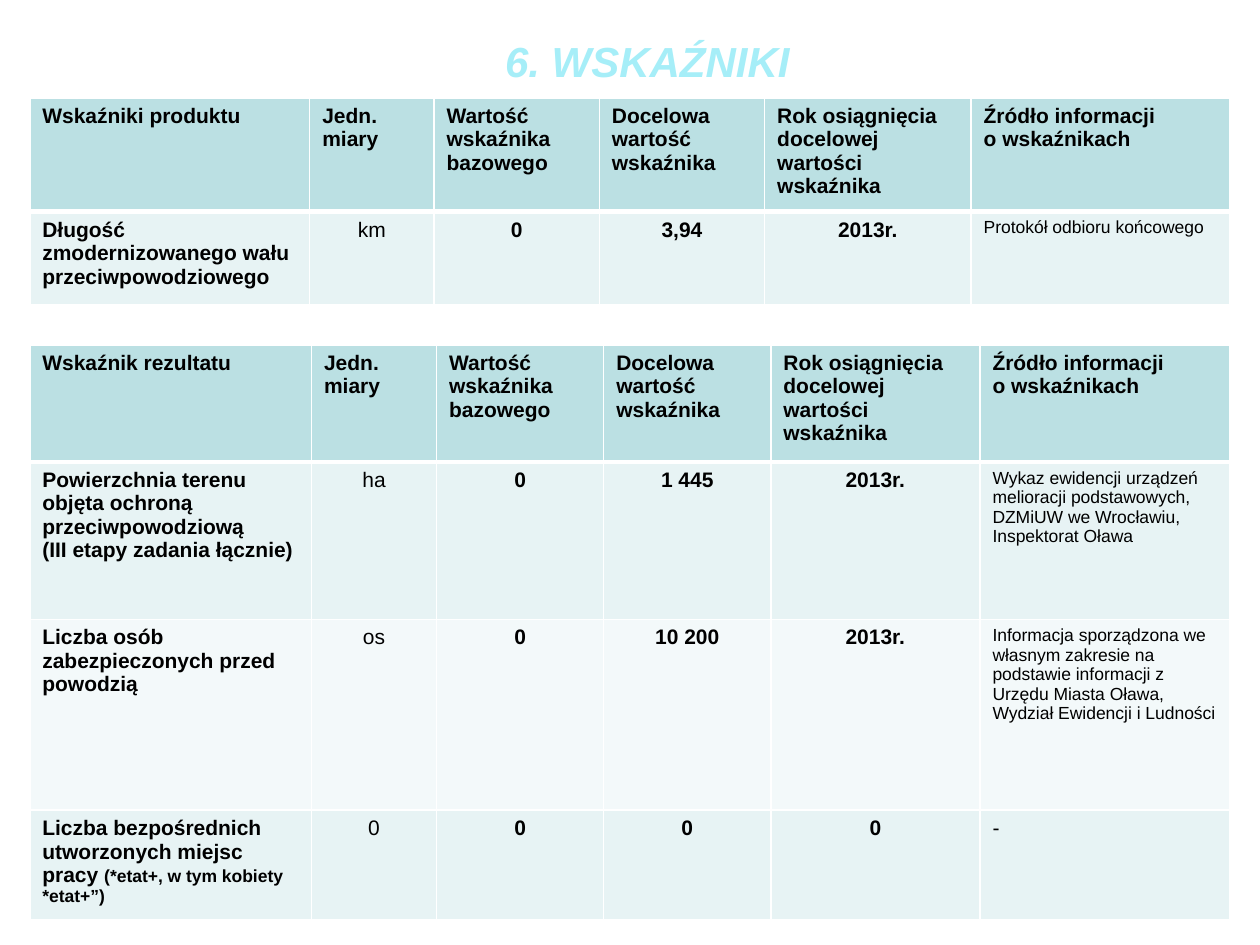
"""Build the slide with the product and result indicator tables."""
import pptx
import pptx.dml.color
import pptx.enum.text
import pptx.oxml
import pptx.oxml.ns
import pptx.util

Pt = pptx.util.Pt
COLORS = {"title": "A6EEF8", "text": "000000", "border": "FFFFFF",
          "header": "BBE0E3", "odd": "E7F3F4", "even": "F3F9FA"}
SIDES = ("L", "R", "T", "B")
UNIT_COLUMN, SOURCE_COLUMN = 1, 5
HEADINGS = ["Jedn. miary", "Wartość wskaźnika bazowego", "Docelowa wartość wskaźnika",
            "Rok osiągnięcia docelowej wartości wskaźnika",
            "Źródło informacji\no wskaźnikach"]

TABLES = [
    {"top": 56,
     "columns": [160, 71, 94.5, 94.5, 118, 148],
     "heights": [65, 53],
     "rows": [
         ["Wskaźniki produktu", *HEADINGS],
         ["Długość zmodernizowanego wału przeciwpowodziowego",
          "km", "0", "3,94", "2013r.", "Protokół odbioru końcowego"]]},
    {"top": 197,
     "columns": [161, 71.5, 95.5, 95.5, 119.5, 143],
     "heights": [67, 90, 109, 62.5],
     "rows": [
         ["Wskaźnik rezultatu", *HEADINGS],
         ["Powierzchnia terenu objęta ochroną przeciwpowodziową\n(III etapy zadania łącznie)",
          "ha", "0", "1 445", "2013r.",
          "Wykaz ewidencji urządzeń melioracji podstawowych, "
          "DZMiUW we Wrocławiu, Inspektorat Oława"],
         ["Liczba osób zabezpieczonych przed powodzią",
          "os", "0", "10 200", "2013r.",
          "Informacja sporządzona we własnym zakresie na podstawie informacji z "
          "Urzędu Miasta Oława, Wydział Ewidencji i Ludności"],
         [[("Liczba bezpośrednich utworzonych miejsc pracy ", 12),
           ("(*etat+, w tym kobiety *etat+”)", 10)],
          "0", "0", "0", "0", [("-", 12)]]]},
]


def add_run(paragraph, text, size, color, bold=True, italic=False):
    for index, line in enumerate(text.split("\n")):
        if index:
            paragraph.add_line_break()
        run = paragraph.add_run()
        run.text = line
        run.font.name = "Arial"
        run.font.size = Pt(size)
        run.font.bold = bold
        run.font.italic = italic
        run.font.color.rgb = pptx.dml.color.RGBColor.from_string(COLORS[color])


def style_cell(cell, fill, bottom_width):
    properties = cell._tc.get_or_add_tcPr()
    for side in SIDES:
        width = Pt(bottom_width if side == "B" else 1)
        properties.append(pptx.oxml.parse_xml(
            f'<a:ln{side} {pptx.oxml.ns.nsdecls("a")} w="{width}"><a:solidFill>'
            f'<a:srgbClr val="{COLORS["border"]}"/></a:solidFill></a:ln{side}>'))
    cell.fill.solid()
    cell.fill.fore_color.rgb = pptx.dml.color.RGBColor.from_string(COLORS[fill])


presentation = pptx.Presentation()
presentation.slide_width = Pt(720)
presentation.slide_height = Pt(540)
slide = presentation.slides.add_slide(presentation.slide_layouts[6])

title = slide.shapes.add_textbox(Pt(281.5), Pt(16.5), Pt(320.5), Pt(36))
title.text_frame.word_wrap = True
add_run(title.text_frame.paragraphs[0], "6. WSKAŹNIKI", 24, "title", italic=True)

for data in TABLES:
    rows, columns, heights = data["rows"], data["columns"], data["heights"]
    shape = slide.shapes.add_table(len(rows), len(columns), Pt(17), Pt(data["top"]),
                                   Pt(sum(columns)), Pt(sum(heights)))
    table = shape.table
    table.first_row = True
    table.horz_banding = False
    for column, width in zip(table.columns, columns):
        column.width = Pt(width)
    for row_index, values in enumerate(rows):
        table.rows[row_index].height = Pt(heights[row_index])
        is_header = row_index == 0
        fill = "header" if is_header else "odd" if row_index % 2 else "even"
        for column_index, value in enumerate(values):
            cell = table.cell(row_index, column_index)
            style_cell(cell, fill, 3 if is_header else 1)
            paragraph = cell.text_frame.paragraphs[0]
            if not is_header and 0 < column_index < SOURCE_COLUMN:
                paragraph.alignment = pptx.enum.text.PP_ALIGN.CENTER
            bold = is_header or column_index not in (UNIT_COLUMN, SOURCE_COLUMN)
            size = 10 if column_index == SOURCE_COLUMN and not is_header else 12
            runs = [(value, size)] if isinstance(value, str) else value
            for text, run_size in runs:
                add_run(paragraph, text, run_size, "text", bold)

presentation.save("out.pptx")
